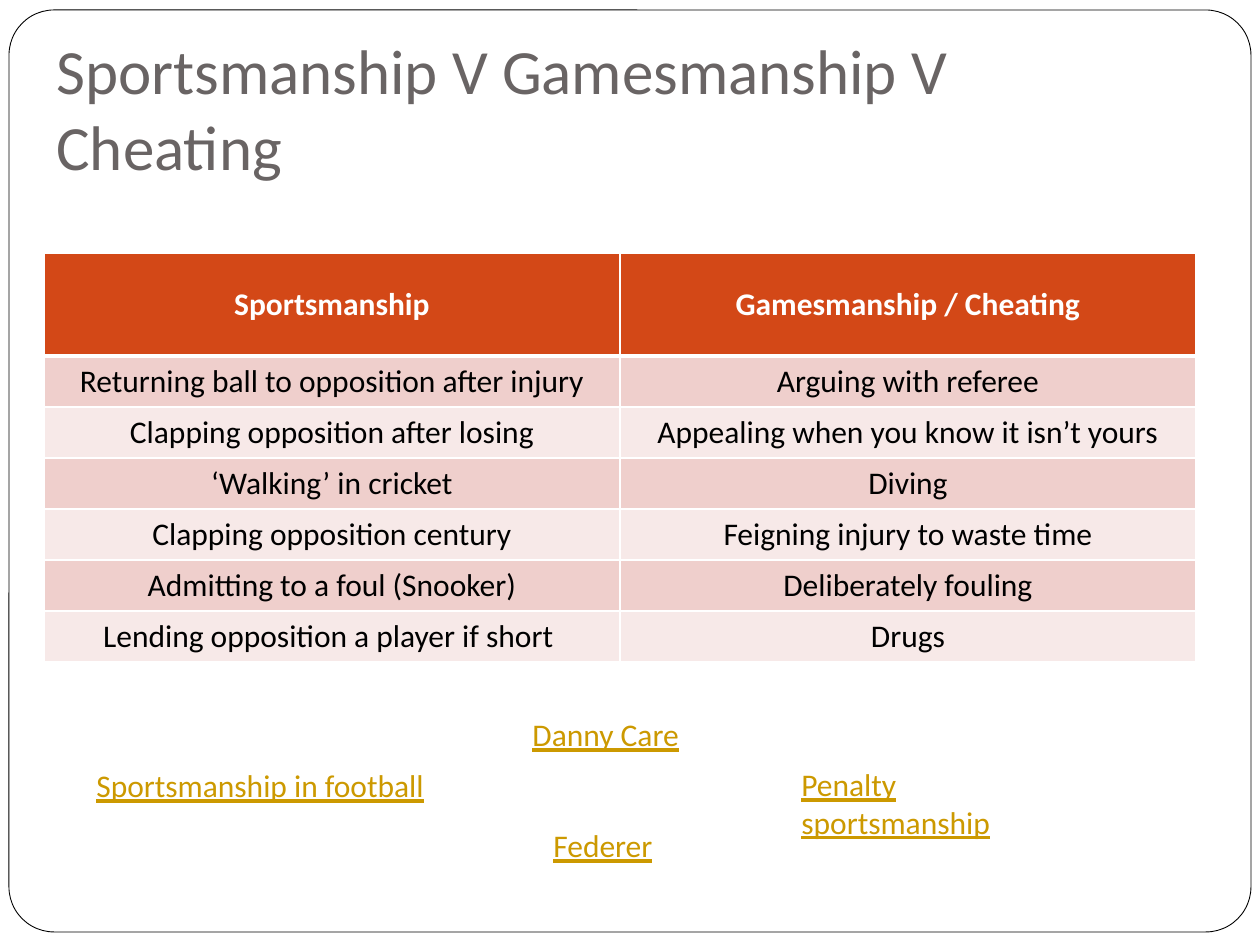
from dataclasses import dataclass

from lxml.etree import SubElement
from pptx import Presentation
from pptx.dml.color import RGBColor
from pptx.enum.shapes import MSO_SHAPE as Shape
from pptx.enum.text import MSO_ANCHOR as Anchor, PP_ALIGN as Align
from pptx.oxml.ns import qn
from pptx.util import Pt

SCALE = 914400 / 126
FONT = "Calibri"
INK = {
    "white": "FFFFFF",
    "black": "000000",
    "title": "696464",
    "head": "D34817",
    "dark": "EFCFCC",
    "light": "F7E9E8",
    "link": "CC9900",
}


@dataclass
class Link:
    text: str
    left: int
    top: int
    width: int


HEADS = ("Sportsmanship", "Gamesmanship / Cheating")
ROWS = [
    ("Returning ball to opposition after injury", "Arguing with referee"),
    ("Clapping opposition after losing", "Appealing when you know it isn’t yours"),
    ("‘Walking’ in cricket", "Diving"),
    ("Clapping opposition century", "Feigning injury to waste time"),
    ("Admitting to a foul (Snooker)", "Deliberately fouling"),
    ("Lending opposition a player if short ", "Drugs"),
]
LINKS = [
    Link("Sportsmanship in football", 84, 760, 367),
    Link("Penalty sportsmanship", 789, 759, 312),
    Link("Danny Care", 520, 709, 205),
    Link("Federer", 541, 820, 136),
]


def px(size: int) -> int:
    return round(size * SCALE)


def tint(name: str) -> RGBColor:
    return RGBColor.from_string(INK[name])


def write(frame, text: str, *, size=18, ink="black", bold=False, line=False, align=Align.LEFT):
    para = frame.paragraphs[0]
    para.alignment = align
    run = para.add_run()
    run.text = text
    font = run.font
    font.name, font.size, font.bold, font.underline = FONT, Pt(size), bold, line
    font.color.rgb = tint(ink)


def add_text(slide, box: tuple, text: str, anchor=Anchor.TOP, **style):
    frame = slide.shapes.add_textbox(*map(px, box)).text_frame
    frame.word_wrap = True
    frame.vertical_anchor = anchor
    write(frame, text, **style)
    return frame


def add_frame(slide):
    card = slide.shapes.add_shape(Shape.ROUNDED_RECTANGLE, *map(px, (9, 10, 1242, 922)))
    card.adjustments[0] = 0.049
    card.shadow.inherit = False
    card.fill.solid()
    card.fill.fore_color.rgb = tint("white")
    card.line.color.rgb = tint("black")
    card.line.width = Pt(0.5)


def edge(cell, base: float):
    props = cell._tc.get_or_add_tcPr()
    for spot, side in enumerate(("lnL", "lnR", "lnT", "lnB")):
        width = base if side == "lnB" else 1
        line = SubElement(props, qn(f"a:{side}"), w=str(Pt(width)))
        fill = SubElement(line, qn("a:solidFill"))
        SubElement(fill, qn("a:srgbClr"), val=INK["white"])
        props.remove(line)
        props.insert(spot, line)


def fill_cell(cell, text: str, fill: str, base: float, **style):
    cell.fill.solid()
    cell.fill.fore_color.rgb = tint(fill)
    cell.vertical_anchor = Anchor.MIDDLE
    write(cell.text_frame, text, align=Align.CENTER, **style)
    edge(cell, base)


def add_grid(slide):
    high, low, wide = 103, 51, 576
    count = len(ROWS) + 1
    box = (44, 253, wide * 2, high + low * len(ROWS))
    table = slide.shapes.add_table(count, 2, *map(px, box)).table
    for col in table.columns:
        col.width = px(wide)
    for r, words in enumerate([HEADS, *ROWS]):
        table.rows[r].height = px(low if r else high)
        for c, text in enumerate(words):
            cell = table.cell(r, c)
            if r == 0:
                fill_cell(cell, text, "head", 3, ink="white", bold=True)
            else:
                fill_cell(cell, text, "dark" if r % 2 else "light", 3 if r == 0 else 1)


def main():
    deck = Presentation()
    deck.slide_width, deck.slide_height = px(1260), px(945)
    slide = deck.slides.add_slide(deck.slide_layouts[6])
    add_frame(slide)
    title = add_text(slide, (44, 38, 1153, 158), "Sportsmanship V Gamesmanship V Cheating",
                     Anchor.BOTTOM, size=36, ink="title")
    title.margin_bottom = px(13)
    add_grid(slide)
    for link in LINKS:
        add_text(slide, (link.left, link.top, link.width, 51), link.text, ink="link", line=True)
    deck.save("out.pptx")


if __name__ == "__main__":
    main()
